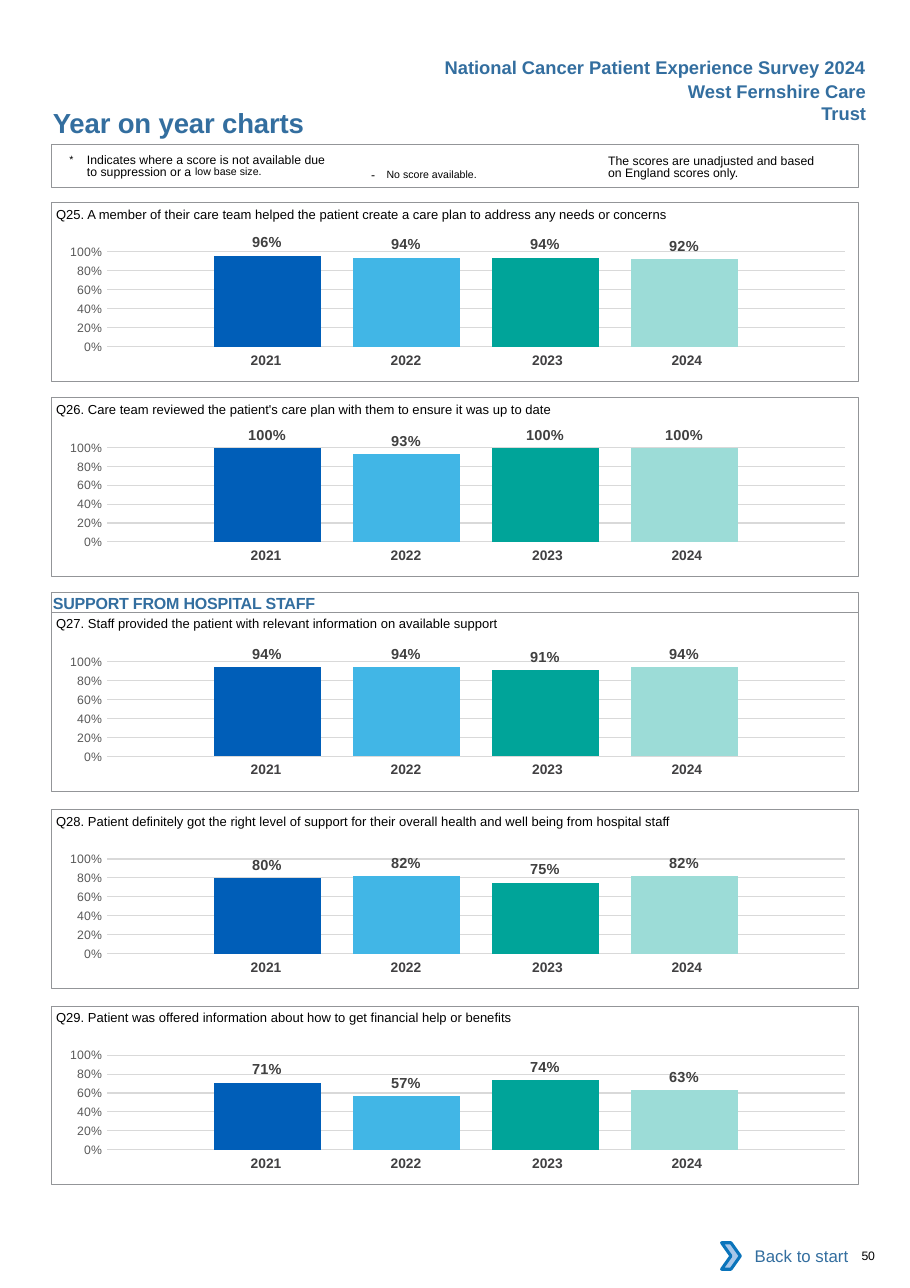
from dataclasses import dataclass

from lxml import etree
from pptx import Presentation
from pptx import util as u
from pptx.chart import data as chart_data
from pptx.dml import color
from pptx.enum import chart as chart_enum
from pptx.enum import shapes, text
from pptx.oxml import ns

COLORS = {
    "heading": "336E9F", "black": "000000", "white": "FFFFFF", "frame": "939598",
    "year": "414042", "label": "404040", "axis": "595959", "grid": "D9D9D9",
    "chevron": "A8C7E9", "chevron_line": "0A74BB",
}
YEAR_COLORS = {"2021": "005EB8", "2022": "41B6E6", "2023": "00A499", "2024": "9CDCD7"}
YEAR_WIDTHS = (1.27, 1.27, 1.34, 1.27)
YEAR_RIGHT_MARGINS = (0, 0, 0.04, 0.12)
PLOT_LAYOUT = {"x": 0.079, "y": 0.145, "w": 0.915, "h": 0.666}
FRAME_LEFT, FRAME_WIDTH, PANEL_HEIGHT = 0.47, 7.32, 1.62
LEFT, RIGHT = text.PP_ALIGN.LEFT, text.PP_ALIGN.RIGHT


@dataclass(frozen=True)
class Run:
    words: str
    size: float
    baseline: int = 0
    spacing: float = 0


@dataclass(frozen=True)
class Label:
    left: float
    top: float
    width: float
    height: float
    runs: tuple[Run, ...]
    color: str = "black"
    bold: bool = False
    align: text.PP_ALIGN = LEFT
    insets: tuple[float, float, float, float] = (0, 0, 0, 0)
    wrap: bool = True
    line_spacing: float | None = None
    hanging: float = 0


@dataclass(frozen=True)
class Panel:
    top: float
    question: str
    scores: tuple[float, ...]


PANELS = (
    Panel(1.84, "Q25. A member of their care team helped the patient create a care plan "
          "to address any needs or concerns", (0.96, 0.94, 0.94, 0.92)),
    Panel(3.61, "Q26. Care team reviewed the patient's care plan with them to ensure "
          "it was up to date", (1, 0.93, 1, 1)),
    Panel(5.56, "Q27. Staff provided the patient with relevant information on available "
          "support", (0.94, 0.94, 0.91, 0.94)),
    Panel(7.35, "Q28. Patient definitely got the right level of support for their overall "
          "health and well being from hospital staff", (0.80, 0.82, 0.75, 0.82)),
    Panel(9.13, "Q29. Patient was offered information about how to get financial help "
          "or benefits", (0.71, 0.57, 0.74, 0.63)),
)
BOX_INSETS = (0.1, 0.05, 0.1, 0.05)
LABELS = (
    Label(3.92, 0.46, 4.04, 0.3, (Run("National Cancer Patient Experience Survey 2024", 12),),
          "heading", True, RIGHT, BOX_INSETS, wrap=False),
    Label(5.77, 0.68, 2.19, 0.3, (Run("West Fernshire Care Trust", 12),),
          "heading", True, RIGHT, BOX_INSETS, wrap=False),
    Label(0.48, 0.96, 4.5, 0.3, (Run("Year on year charts", 18, spacing=-0.1),), "heading", True),
    Label(0.63, 1.38, 2.4, 0.27,
          (Run("*\t", 12, 3), Run("Indicates where a score is not available due to suppression or a ", 8),
           Run("low base size.", 12, 7)),
          insets=(0, 0.03, 0, 0), line_spacing=8.1, hanging=0.16),
    Label(3.27, 1.41, 1.83, 0.24,
          (Run("- ", 8, spacing=2.6), Run("No score available.", 12, 3)), insets=BOX_INSETS),
    Label(5.52, 1.38, 1.96, 0.27,
          (Run("The scores are unadjusted and based on England scores only.", 8),),
          insets=(0, 0.03, 0, 0), line_spacing=8.1),
    Label(0.48, 5.38, 5, 0.18, (Run("SUPPORT FROM HOSPITAL STAFF", 10.5, spacing=-0.1),),
          "heading", True, insets=(0, 0.01, 0, 0)),
    Label(7.82, 11.33, 0.41, 0.13, (Run("50", 8, spacing=-0.2),)),
)


def rgb(value: str) -> color.RGBColor:
    return color.RGBColor.from_string(value)


def style_font(font, size: float, value: str, bold: bool = False) -> None:
    font.name, font.size, font.bold = "Arial", u.Pt(size), bold
    font.color.rgb = rgb(value)


def set_insets(target, insets: tuple[float, ...]) -> None:
    (target.margin_left, target.margin_top,
     target.margin_right, target.margin_bottom) = map(u.Inches, insets)


def add_label(slide, label: Label) -> None:
    box = slide.shapes.add_textbox(*map(u.Inches, (label.left, label.top, label.width, label.height)))
    frame = box.text_frame
    frame.word_wrap = label.wrap
    set_insets(frame, label.insets)
    paragraph = frame.paragraphs[0]
    paragraph.alignment = label.align
    if label.line_spacing:
        paragraph.line_spacing = u.Pt(label.line_spacing)
    if label.hanging:
        properties = paragraph._p.get_or_add_pPr()
        properties.set("marL", str(u.Inches(label.hanging)))
        properties.set("indent", str(-u.Inches(label.hanging)))
    for item in label.runs:
        run = paragraph.add_run()
        run.text = item.words
        style_font(run.font, item.size, COLORS[label.color], label.bold)
        properties = run._r.get_or_add_rPr()
        if item.baseline:
            properties.set("baseline", str(item.baseline * 1000))
        if item.spacing:
            properties.set("spc", str(round(item.spacing * 100)))


def add_box(slide, kind: shapes.MSO_SHAPE, place: tuple[float, ...],
            fill: str | None = None, line: str | None = None, width: float = 0.5):
    shape = slide.shapes.add_shape(kind, *map(u.Inches, place))
    shape.shadow.inherit = False
    if fill:
        shape.fill.solid()
        shape.fill.fore_color.rgb = rgb(COLORS[fill])
    else:
        shape.fill.background()
    if line:
        shape.line.color.rgb = rgb(COLORS[line])
        shape.line.width = u.Pt(width)
    else:
        shape.line.fill.background()
    return shape


def add_years(slide, top: float) -> None:
    place = map(u.Inches, (1.73, top, sum(YEAR_WIDTHS), 0.27))
    table = slide.shapes.add_table(1, len(YEAR_WIDTHS), *place).table
    table.first_row = table.horz_banding = False
    for index, year in enumerate(YEAR_COLORS):
        table.columns[index].width = u.Inches(YEAR_WIDTHS[index])
        cell = table.cell(0, index)
        cell.fill.background()
        set_insets(cell, (0.1, 0.05, YEAR_RIGHT_MARGINS[index], 0.05))
        cell.text_frame.text = year
        paragraph = cell.text_frame.paragraphs[0]
        paragraph.alignment = text.PP_ALIGN.CENTER
        style_font(paragraph.runs[0].font, 9, COLORS["year"], True)


def fix_plot_area(chart) -> None:
    area = chart._chartSpace.chart.plotArea
    for old in area.findall(ns.qn("c:layout")):
        area.remove(old)
    layout = etree.Element(ns.qn("c:layout"))
    manual = etree.SubElement(layout, ns.qn("c:manualLayout"))
    settings = {"layoutTarget": "inner", "xMode": "edge", "yMode": "edge", **PLOT_LAYOUT}
    for tag, value in settings.items():
        etree.SubElement(manual, ns.qn(f"c:{tag}")).set("val", str(value))
    area.insert(0, layout)


def add_scores(slide, top: float, scores: tuple[float, ...]) -> None:
    values = chart_data.CategoryChartData(number_format="0%")
    values.categories = ["1"]
    for number, score in enumerate(scores, 1):
        values.add_series(f"Series {number}", [score])
    place = map(u.Inches, (0.39, top, 7.32, 1.29))
    chart = slide.shapes.add_chart(chart_enum.XL_CHART_TYPE.COLUMN_CLUSTERED, *place, values).chart
    chart.has_legend = chart.has_title = False
    chart.font.name, chart.font.size = "Calibri", u.Pt(10)
    chart.font.color.rgb = rgb(COLORS["black"])
    fix_plot_area(chart)
    chart.category_axis.visible = False
    axis = chart.value_axis
    axis.minimum_scale, axis.maximum_scale, axis.major_unit = 0, 1, 0.2
    axis.major_tick_mark = axis.minor_tick_mark = chart_enum.XL_TICK_MARK.NONE
    axis.format.line.fill.background()
    axis.major_gridlines.format.line.color.rgb = rgb(COLORS["grid"])
    axis.major_gridlines.format.line.width = u.Pt(0.75)
    axis.tick_labels.number_format, axis.tick_labels.number_format_is_linked = "0%", False
    style_font(axis.tick_labels.font, 8, COLORS["axis"])
    plot = chart.plots[0]
    plot.gap_width, plot.overlap, plot.vary_by_categories = 200, -30, False
    for series, fill in zip(plot.series, YEAR_COLORS.values()):
        series.format.fill.solid()
        series.format.fill.fore_color.rgb = rgb(fill)
        labels = series.data_labels
        labels.show_value = True
        labels.position = chart_enum.XL_LABEL_POSITION.OUTSIDE_END
        labels.number_format, labels.number_format_is_linked = "0%", False
        style_font(labels.font, 9.5, COLORS["label"], True)


def add_panel(slide, panel: Panel) -> None:
    add_years(slide, panel.top + 1.31)
    add_scores(slide, panel.top + 0.26, panel.scores)
    add_box(slide, shapes.MSO_SHAPE.RECTANGLE,
            (FRAME_LEFT, panel.top, FRAME_WIDTH, PANEL_HEIGHT), line="frame")
    add_label(slide, Label(0.51, panel.top - 0.06, 7.2, 0.24, (Run(panel.question, 8.5),),
                           insets=(0, 0.09, 0, 0)))


def add_back_button(slide) -> None:
    button = add_box(slide, shapes.MSO_SHAPE.RECTANGLE, (6.62, 11.19, 1.18, 0.42), "white")
    frame = button.text_frame
    frame.text = "Back to start"
    frame.word_wrap = True
    frame.vertical_anchor = text.MSO_ANCHOR.MIDDLE
    frame.paragraphs[0].alignment = RIGHT
    style_font(frame.paragraphs[0].runs[0].font, 11, COLORS["heading"])
    add_box(slide, shapes.MSO_SHAPE.CHEVRON, (6.55, 11.28, 0.17, 0.24), "chevron", "chevron_line", 2)


def main() -> None:
    """Build the year on year charts page of the survey report."""
    presentation = Presentation()
    presentation.slide_width, presentation.slide_height = u.Inches(8.26), u.Inches(11.69)
    slide = presentation.slides.add_slide(presentation.slide_layouts[6])
    for panel in PANELS:
        add_panel(slide, panel)
    for top, height, width in ((1.31, 0.39, 0.75), (5.38, 0.18, 0.5)):
        add_box(slide, shapes.MSO_SHAPE.RECTANGLE,
                (FRAME_LEFT, top, FRAME_WIDTH, height), line="frame", width=width)
    for label in LABELS:
        add_label(slide, label)
    add_back_button(slide)
    presentation.save("out.pptx")


if __name__ == "__main__":
    main()
